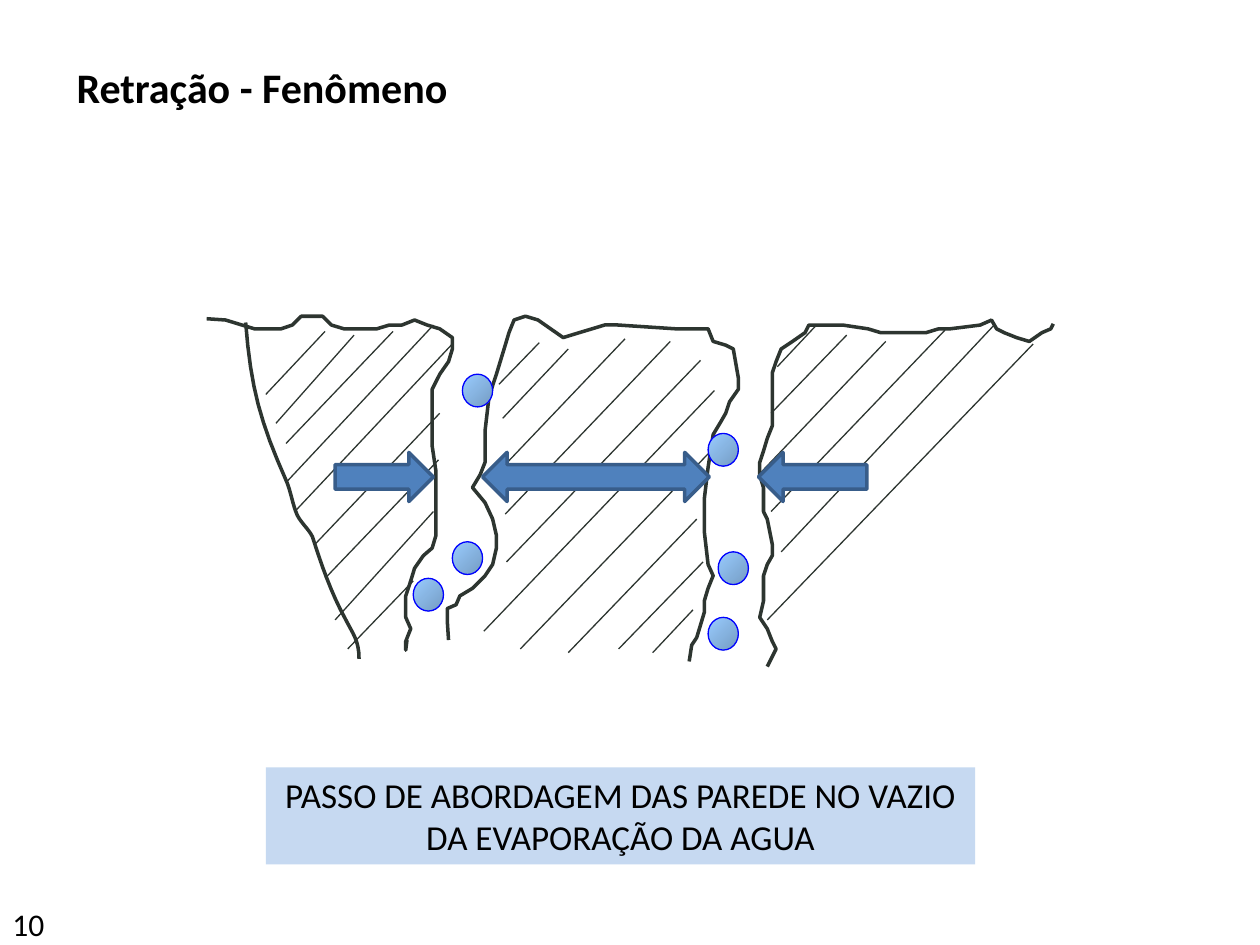
from pptx import Presentation
from pptx.dml.color import RGBColor
from pptx.enum.shapes import MSO_CONNECTOR, MSO_SHAPE
from pptx.enum.text import MSO_ANCHOR, PP_ALIGN
from pptx.oxml.ns import qn
from pptx.util import Inches, Pt
from lxml.etree import SubElement

INK = RGBColor(0x2D, 0x35, 0x30)
BLACK = RGBColor(0, 0, 0)
ARROW_FILL = RGBColor(0x4F, 0x81, 0xBD)
ARROW_LINE = RGBColor(0x38, 0x5D, 0x8A)
CAPTION_FILL = RGBColor(0xC6, 0xD9, 0xF1)
DROP_LIGHT = RGBColor(0x99, 0xCC, 0xFF)
DROP_DARK = RGBColor(0x75, 0x9C, 0xC3)
DROP_LINE = RGBColor(0, 0, 0xFF)

TITLE = "Retração - Fenômeno"
CAPTION = "PASSO DE ABORDAGEM DAS PAREDE NO VAZIO DA EVAPORAÇÃO DA AGUA"
PAGE = "10"

# Outlines of the three solid blocks, in inches
LEFT_BLOCK = [
    (1.64, 2.53), (1.79, 2.54), (1.92, 2.58), (2.02, 2.61), (2.23, 2.61), (2.32, 2.58),
    (2.39, 2.51), (2.56, 2.51), (2.63, 2.58), (2.73, 2.61), (2.99, 2.61), (3.09, 2.58),
    (3.19, 2.58), (3.29, 2.54), (3.39, 2.58), (3.49, 2.61), (3.59, 2.68), (3.59, 2.77),
    (3.56, 2.87), (3.49, 2.97), (3.43, 3.09), (3.43, 3.54), (3.46, 3.74), (3.46, 4.25),
    (3.43, 4.35), (3.36, 4.41), (3.29, 4.51), (3.26, 4.61), (3.22, 4.73), (3.22, 4.9),
    (3.26, 4.99), (3.22, 5.09), (3.22, 5.16), (3.23, 5.08)]
MIDDLE_BLOCK = [
    (3.56, 5.08), (3.55, 4.93), (3.55, 4.83), (3.62, 4.8), (3.65, 4.73), (3.75, 4.67),
    (3.85, 4.57), (3.91, 4.48), (3.94, 4.35), (3.94, 4.25), (3.91, 4.12), (3.85, 3.99),
    (3.75, 3.87), (3.81, 3.77), (3.85, 3.67), (3.85, 3.42), (3.88, 3.16), (3.91, 3.06),
    (3.94, 2.97), (4.01, 2.74), (4.04, 2.64), (4.08, 2.54), (4.17, 2.51), (4.27, 2.54),
    (4.37, 2.61), (4.47, 2.68), (4.6, 2.64), (4.7, 2.61), (4.8, 2.58), (4.9, 2.58),
    (5.36, 2.61), (5.62, 2.61), (5.66, 2.71), (5.76, 2.74), (5.82, 2.77), (5.86, 3),
    (5.86, 3.09), (5.79, 3.19), (5.76, 3.28), (5.72, 3.35), (5.66, 3.45), (5.62, 3.71),
    (5.59, 3.96), (5.59, 4.22), (5.62, 4.48), (5.66, 4.57), (5.62, 4.67), (5.59, 4.77),
    (5.59, 4.86), (5.56, 4.96), (5.53, 5.06), (5.49, 5.12), (5.47, 5.25)]
RIGHT_BLOCK = [
    (6.09, 5.29), (6.16, 5.15), (6.13, 5.09), (6.09, 4.99), (6.03, 4.9), (6.06, 4.77),
    (6.06, 4.57), (6.09, 4.48), (6.13, 4.41), (6.13, 4.32), (6.09, 4.12), (6.06, 4.06),
    (6.06, 3.87), (6.03, 3.77), (6.03, 3.67), (6.06, 3.58), (6.09, 3.48), (6.13, 3.38),
    (6.13, 2.96), (6.16, 2.87), (6.2, 2.77), (6.29, 2.71), (6.39, 2.64), (6.42, 2.58),
    (6.69, 2.58), (6.89, 2.61), (6.99, 2.64), (7.35, 2.64), (7.45, 2.61), (7.54, 2.61),
    (7.78, 2.58), (7.87, 2.54), (7.91, 2.61), (7.97, 2.64), (8.07, 2.68), (8.17, 2.71),
    (8.27, 2.64), (8.34, 2.61), (8.36, 2.57)]

# Outer edge: a start point, then Bezier segments (control, control, end)
EDGE_START = (1.95, 2.56)
EDGE_CURVES = [
    ((1.99, 3.08), (2.07, 3.36), (2.27, 3.81)),
    ((2.31, 3.9), (2.32, 4), (2.36, 4.09)),
    ((2.39, 4.15), (2.45, 4.2), (2.48, 4.26)),
    ((2.55, 4.48), (2.63, 4.71), (2.74, 4.91)),
    ((2.8, 5.03), (2.85, 5.08), (2.85, 5.23))]

# Hatching: upper right x, y, lower left x, y
HATCHING = [
    (2.58, 2.63, 2.11, 3.13), (2.81, 2.66, 2.19, 3.36), (3.12, 2.63, 2.27, 3.52),
    (3.44, 2.58, 2.27, 3.83), (3.59, 2.73, 2.34, 4.06), (3.49, 3.28, 2.5, 4.32),
    (3.48, 3.65, 2.58, 4.59), (3.28, 4.61, 2.76, 5.15), (3.44, 4.06, 2.66, 4.92),
    (4.96, 2.69, 3.95, 3.75), (5.32, 2.71, 4.01, 4.08), (5.56, 2.86, 4.02, 4.46),
    (4.28, 2.72, 3.96, 3.05), (4.51, 2.77, 3.99, 3.32), (5.67, 3.1, 3.84, 5.01),
    (5.67, 3.55, 4.13, 5.15), (5.53, 4.12, 4.51, 5.18), (5.58, 4.46, 4.91, 5.15),
    (5.5, 4.84, 5.18, 5.18), (7.03, 2.71, 6.02, 3.77), (7.5, 2.62, 6.12, 4.06),
    (7.89, 2.58, 6.2, 4.38), (6.48, 2.58, 6.17, 2.91), (6.72, 2.66, 6.12, 3.28),
    (8.2, 2.73, 6.09, 4.92)]

ARROW_TOP, ARROW_HEIGHT = 3.59, 0.39
ARROWS = [  # preset, left, width
    (MSO_SHAPE.RIGHT_ARROW, 2.66, 0.78),
    (MSO_SHAPE.LEFT_RIGHT_ARROW, 3.83, 1.8),
    (MSO_SHAPE.LEFT_ARROW, 6.02, 0.86)]

DROP_SIZE = (0.24, 0.26)
DROPS = [(5.7, 4.38), (3.59, 4.3), (5.62, 3.44), (3.67, 2.97), (5.62, 4.9), (3.28, 4.59)]


def bezier_points(start, curves, steps=8):
    points = [start]
    for c1, c2, end in curves:
        p0 = points[-1]
        for i in range(1, steps + 1):
            t = i / steps
            u = 1 - t
            points.append(tuple(
                u**3 * a + 3 * u * u * t * b + 3 * u * t * t * c + t**3 * d
                for a, b, c, d in zip(p0, c1, c2, end)))
    return points


def set_line(s, color, width):
    s.line.color.rgb = color
    s.line.width = Pt(width)


def add_outline(shapes, points):
    start, *rest = [(Inches(x), Inches(y)) for x, y in points]
    builder = shapes.build_freeform(*start)
    builder.add_line_segments(rest, close=False)
    s = builder.convert_to_shape()
    s.shadow.inherit = False
    s.fill.background()
    set_line(s, INK, 2)


def add_hatch(shapes, ends):
    s = shapes.add_connector(MSO_CONNECTOR.STRAIGHT, *map(Inches, ends))
    set_line(s, INK, 0.75)
    SubElement(s._element.spPr, qn("a:effectLst"))


def add_preset(shapes, preset, *box):
    s = shapes.add_shape(preset, *map(Inches, box))
    s.shadow.inherit = False
    return s


def add_drop(shapes, left, top):
    s = add_preset(shapes, MSO_SHAPE.OVAL, left, top, *DROP_SIZE)
    s.fill.gradient()
    s.fill.gradient_angle = 315
    for stop, color, position in zip(s.fill.gradient_stops, (DROP_LIGHT, DROP_DARK), (0, 1)):
        stop.color.rgb = color
        stop.position = position
    set_line(s, DROP_LINE, 0.75)


def write(s, text, size, bold=False, align=PP_ALIGN.LEFT):
    tf = s.text_frame
    tf.text = text
    tf.word_wrap = True
    tf.vertical_anchor = MSO_ANCHOR.TOP
    p = tf.paragraphs[0]
    p.alignment = align
    font = p.runs[0].font
    font.name, font.size, font.bold = "Calibri", Pt(size), bold
    font.color.rgb = BLACK
    return p


def main():
    prs = Presentation()
    prs.slide_width, prs.slide_height = Inches(10), Inches(7.5)
    shapes = prs.slides.add_slide(prs.slide_layouts[6]).shapes

    section = shapes.add_group_shape().shapes
    edge = bezier_points(EDGE_START, EDGE_CURVES)
    for points in (LEFT_BLOCK, MIDDLE_BLOCK, RIGHT_BLOCK, edge):
        add_outline(section, points)
    for ends in HATCHING:
        add_hatch(section, ends)

    page = shapes.add_textbox(*map(Inches, (0, 7.13, 0.75, 0.37)))
    write(page, PAGE, 18).space_before = Pt(10)

    caption = add_preset(shapes, MSO_SHAPE.RECTANGLE, 2.11, 6.09, 5.63, 0.77)
    caption.fill.solid()
    caption.fill.fore_color.rgb = CAPTION_FILL
    caption.line.fill.background()
    write(caption, CAPTION, 20, align=PP_ALIGN.CENTER)

    for preset, left, width in ARROWS:
        s = add_preset(shapes, preset, left, ARROW_TOP, width, ARROW_HEIGHT)
        s.fill.solid()
        s.fill.fore_color.rgb = ARROW_FILL
        set_line(s, ARROW_LINE, 2)
    for left, top in DROPS:
        add_drop(shapes, left, top)

    title = shapes.add_textbox(*map(Inches, (0.51, 0.44, 5.83, 0.5)))
    write(title, TITLE, 24, bold=True)
    prs.save("out.pptx")


if __name__ == "__main__":
    main()
